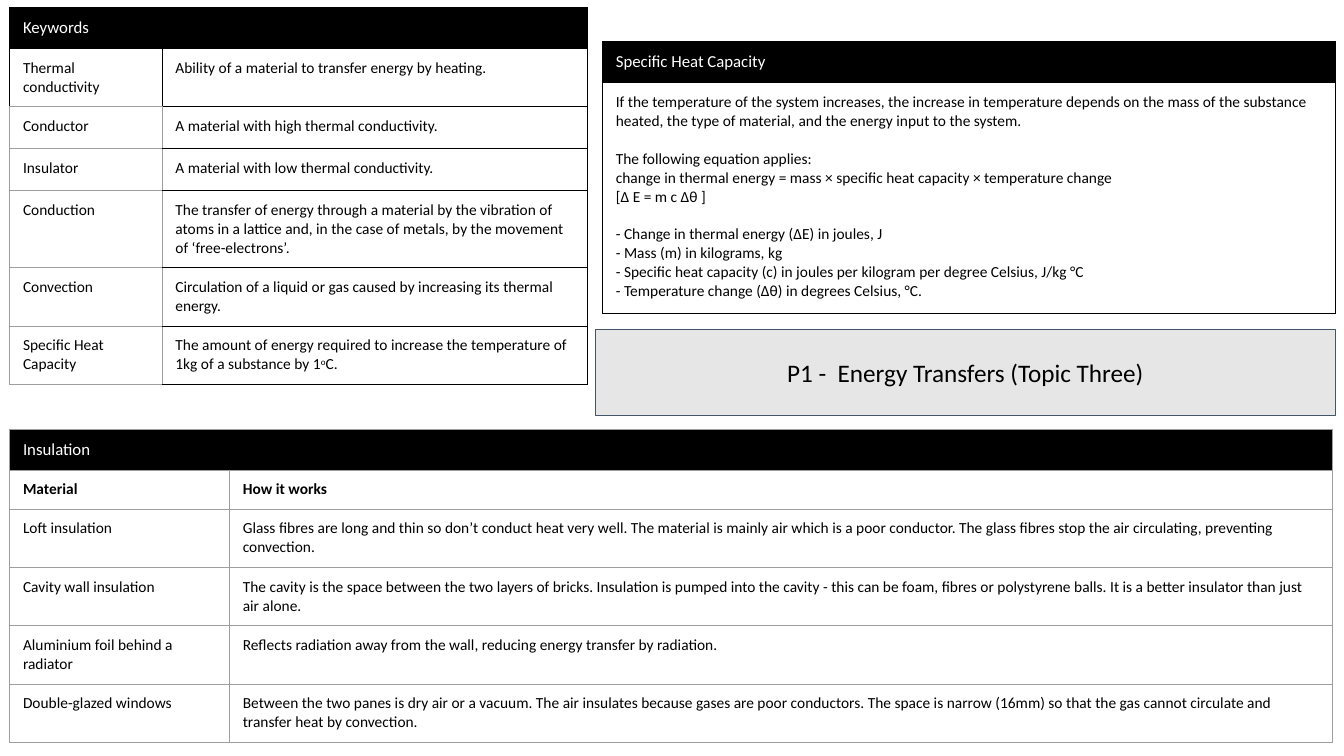
from dataclasses import dataclass
from typing import Callable

import pptx
import pptx.dml.color
import pptx.enum.text
import pptx.oxml
import pptx.oxml.ns
import pptx.util
from lxml import etree
from pptx.util import Cm, Pt

FONT = "Calibri"
BLACK, WHITE, GREY = "000000", "FFFFFF", "9E9E9E"
PANEL_FILL, PANEL_LINE = "E7E6E6", "44546A"
MARGIN_X, MARGIN_Y = Cm(0.33), Cm(0.25)
LINE_GAP = Pt(13.4)


@dataclass
class Grid:
    left: float
    top: float
    columns: list[float]
    heights: list[float]
    heading: str
    rows: list[list[str]]  # "\n" starts a paragraph, "\v" a line, "^" wraps superscript
    grey_edges: Callable[[int, int], str]  # cell sides drawn grey, the others black
    bold_rows: tuple[int, ...] = ()


def keyword_edges(row: int, column: int) -> str:
    if row < 2:
        return "B" if (row, column) == (1, 0) else ""
    return "LRTB" if column == 0 else "L"


GRIDS = [
    Grid(0.25, 0.18, [3.84, 10.72], [1.04, 1.47, 1.06, 1.06, 1.94, 1.47, 1.47],
         "Keywords", [
             ["Thermal conductivity", "Ability of a material to transfer energy by heating."],
             ["Conductor", "A material with high thermal conductivity."],
             ["Insulator", "A material with low thermal conductivity."],
             ["Conduction", "The transfer of energy through a material by the vibration of "
              "atoms in a lattice and, in the case of metals, by the movement of "
              "‘free-electrons’."],
             ["Convection", "Circulation of a liquid or gas caused by increasing its "
              "thermal energy."],
             ["Specific Heat Capacity", "The amount of energy required to increase the "
              "temperature of 1kg of a substance by 1^o^C."],
         ], keyword_edges),
    Grid(15.19, 1.04, [18.47], [1.04, 5.81], "Specific Heat Capacity", [
        ["If the temperature of the system increases, the increase in temperature depends "
         "on the mass of the substance heated, the type of material, and the energy input "
         "to the system."
         "\nThe following equation applies:"
         "\vchange in thermal energy = mass × specific heat capacity × temperature change"
         "\v[Δ E = m c Δθ ]"
         "\n- Change in thermal energy (ΔE) in joules, J"
         "\v- Mass (m) in kilograms, kg"
         "\v- Specific heat capacity (c) in joules per kilogram per degree Celsius, J/kg °C"
         "\v- Temperature change (Δθ) in degrees Celsius, °C."],
    ], lambda row, column: ""),
    Grid(0.25, 10.83, [5.54, 27.79], [1.02, 0.98] + [1.47] * 4, "Insulation", [
        ["Material", "How it works"],
        ["Loft insulation", "Glass fibres are long and thin so don’t conduct heat very well. "
         "The material is mainly air which is a poor conductor. The glass fibres stop the "
         "air circulating, preventing convection."],
        ["Cavity wall insulation", "The cavity is the space between the two layers of bricks. "
         "Insulation is pumped into the cavity - this can be foam, fibres or polystyrene "
         "balls. It is a better insulator than just air alone."],
        ["Aluminium foil behind a radiator", "Reflects radiation away from the wall, "
         "reducing energy transfer by radiation."],
        ["Double-glazed windows", "Between the two panes is dry air or a vacuum. The air "
         "insulates because gases are poor conductors. The space is narrow (16mm) so that "
         "the gas cannot circulate and transfer heat by convection."],
    ], lambda row, column: "LRTB", bold_rows=(1,)),
]


def colour(value: str) -> pptx.dml.color.RGBColor:
    return pptx.dml.color.RGBColor.from_string(value)


def format_span(span, size: float, shade: str, bold: bool = False) -> None:
    span.font.name = FONT
    span.font.size = Pt(size)
    span.font.bold = bold
    span.font.color.rgb = colour(shade)


def set_margins(target) -> None:
    target.margin_left = target.margin_right = MARGIN_X
    target.margin_top = target.margin_bottom = MARGIN_Y


def set_borders(cell, grey: str) -> None:
    properties = cell._tc.get_or_add_tcPr()
    for side in "LRTB":
        shade = GREY if side in grey else BLACK
        properties.append(pptx.oxml.parse_xml(
            f'<a:ln{side} {pptx.oxml.ns.nsdecls("a")} w="{Pt(0.75)}"><a:solidFill>'
            f'<a:srgbClr val="{shade}"/></a:solidFill></a:ln{side}>'))


def write_cell(cell, text: str, size: float, shade: str, bold: bool) -> None:
    cell.text_frame.text = text.replace("^", "") if "^" not in text else ""
    if "^" in text:
        for index, part in enumerate(text.split("^")):
            span = cell.text_frame.paragraphs[0].add_run()
            span.text = part
            if index % 2:
                span.font._element.set("baseline", "30000")
    for index, para in enumerate(cell.text_frame.paragraphs):
        if index:
            para.space_before = LINE_GAP
        for span in para.runs:
            format_span(span, size, shade, bold)


def draw_grid(page, grid: Grid) -> None:
    frame = page.shapes.add_table(
        len(grid.heights), len(grid.columns), Cm(grid.left), Cm(grid.top),
        Cm(sum(grid.columns)), Cm(sum(grid.heights)))
    table = frame.table
    table.first_row = table.horz_banding = False
    for column, width in zip(table.columns, grid.columns):
        column.width = Cm(width)
    for row, height in zip(table.rows, grid.heights):
        row.height = Cm(height)

    heading = [grid.heading] + [""] * (len(grid.columns) - 1)
    for r, texts in enumerate([heading] + grid.rows):
        for c, text in enumerate(texts):
            cell = table.cell(r, c)
            set_margins(cell)
            set_borders(cell, grid.grey_edges(r, c))
            if r == 0:
                cell.fill.solid()
                cell.fill.fore_color.rgb = colour(BLACK)
                write_cell(cell, text, 12, WHITE, False)
            else:
                cell.fill.background()
                write_cell(cell, text, 11, BLACK, r in grid.bold_rows)
    if len(grid.columns) > 1:
        table.cell(0, 0).merge(table.cell(0, len(grid.columns) - 1))


def draw_title(page) -> None:
    box = page.shapes.title
    box.left, box.top, box.width, box.height = Cm(15.01), Cm(8.31), Cm(18.64), Cm(2.16)
    outline = etree.SubElement(box._element.spPr, pptx.oxml.ns.qn("a:prstGeom"),
                               prst="roundRect")
    etree.SubElement(outline, pptx.oxml.ns.qn("a:avLst"))
    box.fill.solid()
    box.fill.fore_color.rgb = colour(PANEL_FILL)
    box.line.color.rgb = colour(PANEL_LINE)
    box.line.width = Pt(0.75)
    frame = box.text_frame
    frame.text = "P1 -  Energy Transfers (Topic Three)"
    frame.auto_size = pptx.enum.text.MSO_AUTO_SIZE.NONE
    frame.word_wrap = True
    frame.vertical_anchor = pptx.enum.text.MSO_ANCHOR.MIDDLE
    set_margins(frame)
    para = frame.paragraphs[0]
    para.alignment = pptx.enum.text.PP_ALIGN.CENTER
    format_span(para.runs[0], 18, BLACK)


def main() -> None:
    deck = pptx.Presentation()
    deck.slide_width, deck.slide_height = Cm(33.87), Cm(19.05)
    page = deck.slides.add_slide(deck.slide_layouts.get_by_name("Title Only"))

    # Topic banner
    draw_title(page)

    # Keywords, equation and insulation tables
    for grid in GRIDS:
        draw_grid(page, grid)

    deck.save("out.pptx")


if __name__ == "__main__":
    main()
